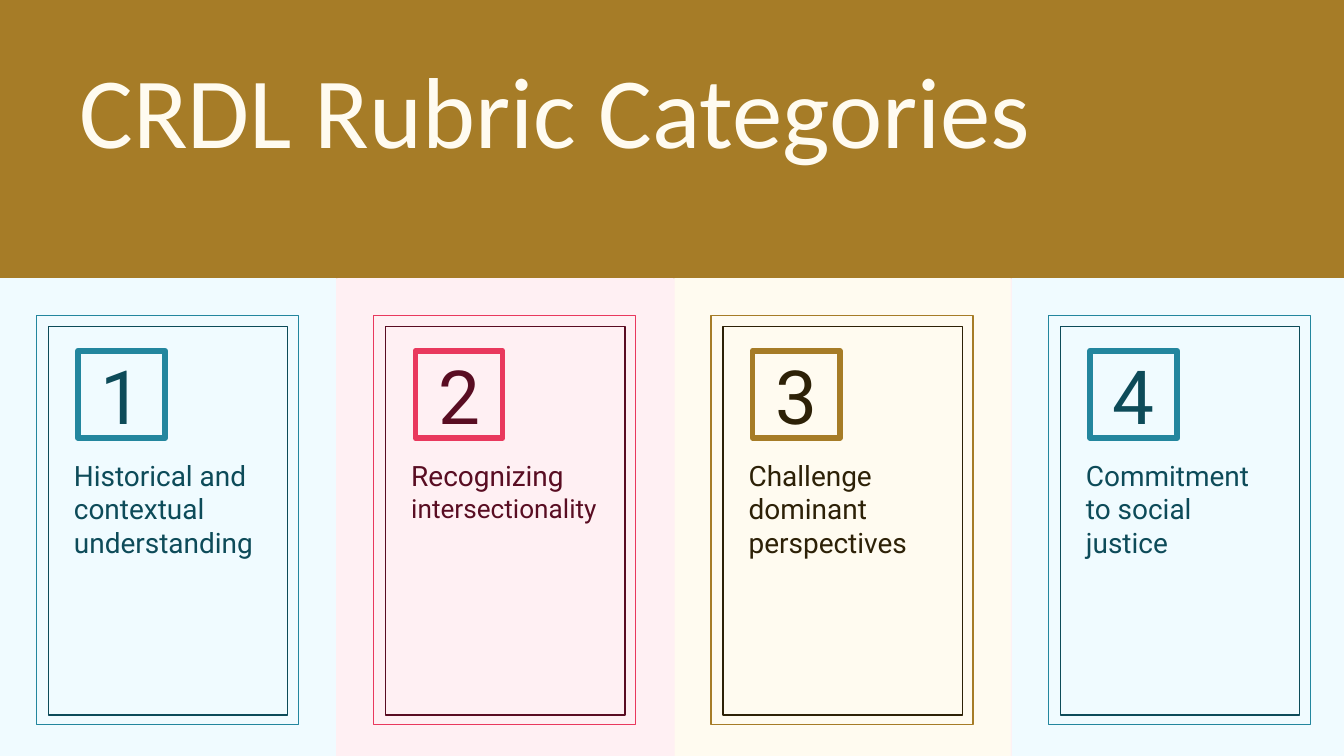
from collections import namedtuple

from pptx import Presentation
from pptx.dml.color import RGBColor
from pptx.enum.shapes import MSO_SHAPE
from pptx.enum.text import MSO_ANCHOR, MSO_AUTO_SIZE, PP_ALIGN
from pptx.oxml.ns import qn
from pptx.util import Inches, Pt

Palette = namedtuple("Palette", "panel accent dark")

GOLD = RGBColor(0xA6, 0x7C, 0x27)
CREAM = RGBColor(0xFF, 0xFB, 0xF0)
PINK = RGBColor(0xFF, 0xF0, 0xF3)
TEAL_PALETTE = Palette(RGBColor(0xF0, 0xFB, 0xFF), RGBColor(0x23, 0x86, 0x9E),
                       RGBColor(0x0D, 0x4B, 0x59))
ROSE_PALETTE = Palette(PINK, RGBColor(0xE9, 0x39, 0x5D), RGBColor(0x59, 0x0D, 0x22))
GOLD_PALETTE = Palette(CREAM, GOLD, RGBColor(0x2D, 0x21, 0x07))

SLIDE_WIDTH, SLIDE_HEIGHT = 10, 5.625
HEADER_HEIGHT = 2.07
COLUMN_PITCH, COLUMN_WIDTH = 2.51, 2.5

# Each category: palette, text runs as (text, size), width of the text
CATEGORIES = [
    (TEAL_PALETTE, [("Historical and contextual understanding", 15)], 1.62),
    (ROSE_PALETTE, [("Recognizing ", 15), ("intersectionality", 14)], 1.68),
    (GOLD_PALETTE, [("Challenge dominant perspectives", 15)], 1.62),
    (TEAL_PALETTE, [("Commitment to social justice", 15)], 1.62),
]


def place(shape, left, top, width, height):
    shape.left, shape.top = Inches(left), Inches(top)
    shape.width, shape.height = Inches(width), Inches(height)


def add_rectangle(slide, box, fill=None, line=None, line_width=0.75):
    shape = slide.shapes.add_shape(MSO_SHAPE.RECTANGLE, *map(Inches, box))
    shape.shadow.inherit = False
    if fill is None:
        shape.fill.background()
    else:
        shape.fill.solid()
        shape.fill.fore_color.rgb = fill
    if line is None:
        shape.line.fill.background()
    else:
        shape.line.color.rgb = line
        shape.line.width = Pt(line_width)
    return shape


def write(shape, runs, font_name, color, anchor=MSO_ANCHOR.TOP, align=PP_ALIGN.LEFT):
    """Fill the shape with one paragraph of (text, size) runs and return it."""
    frame = shape.text_frame
    frame.word_wrap = True
    frame.auto_size = MSO_AUTO_SIZE.NONE
    frame.vertical_anchor = anchor
    frame.margin_left = frame.margin_right = Inches(0.1)
    frame.margin_top = frame.margin_bottom = Inches(0.1)
    paragraph = frame.paragraphs[0]
    paragraph.alignment = align
    paragraph.space_before = Pt(0)
    for text, size in runs:
        run = paragraph.add_run()
        run.text = text
        run.font.name = font_name
        run.font.size = Pt(size)
        run.font.bold = False
        run.font.color.rgb = color
    return paragraph


def bring_to_front(slide, shape):
    slide.shapes.element.append(shape.element)


def remove_bullet(paragraph):
    properties = paragraph._p.get_or_add_pPr()
    properties.set("marL", "0")
    properties.set("indent", "0")
    properties.append(properties.makeelement(qn("a:buNone"), {}))


def add_header(slide, left, top, width, height):
    add_rectangle(slide, (left, top, width, height), fill=GOLD)
    title = slide.shapes.title
    bring_to_front(slide, title)
    place(title, left + 0.49, top + 0.43, width - 0.98, 1.25)
    paragraph = write(title, [("CRDL Rubric Categories", 54)], "Calibri", CREAM)
    paragraph.line_spacing = 0.8


def add_category(slide, body, number, category, left, top, width, height):
    palette, runs, text_width = category
    add_rectangle(slide, (left, top, width, height), fill=palette.panel)
    add_rectangle(slide, (left + 0.27, top + 0.28, 1.95, 3.04), line=palette.accent)
    add_rectangle(slide, (left + 0.36, top + 0.36, 1.78, 2.89), line=palette.dark)

    badge = add_rectangle(slide, (left + 0.58, top + 0.54, 0.65, 0.65),
                          line=palette.accent, line_width=3)
    write(badge, [(str(number), 40)], "Roboto", palette.dark,
          MSO_ANCHOR.MIDDLE, PP_ALIGN.CENTER)

    bring_to_front(slide, body)
    place(body, left + 0.45, top + 1.24, text_width, 1.91)
    remove_bullet(write(body, runs, "Roboto", palette.dark))


def main():
    presentation = Presentation()
    presentation.slide_width = Inches(SLIDE_WIDTH)
    presentation.slide_height = Inches(SLIDE_HEIGHT)
    # The Comparison layout has a title and four text placeholders
    slide = presentation.slides.add_slide(presentation.slide_layouts.get_by_name("Comparison"))
    slide.background.fill.solid()
    slide.background.fill.fore_color.rgb = PINK

    bodies = [shape for shape in slide.placeholders if shape.placeholder_format.idx in range(1, 5)]
    add_header(slide, 0, 0, SLIDE_WIDTH, HEADER_HEIGHT)
    for index, (body, category) in enumerate(zip(bodies, CATEGORIES)):
        left = index * COLUMN_PITCH
        width = min(COLUMN_WIDTH, SLIDE_WIDTH - left)
        add_category(slide, body, index + 1, category,
                     left, HEADER_HEIGHT, width, SLIDE_HEIGHT - HEADER_HEIGHT)
    presentation.save("out.pptx")


if __name__ == "__main__":
    main()
